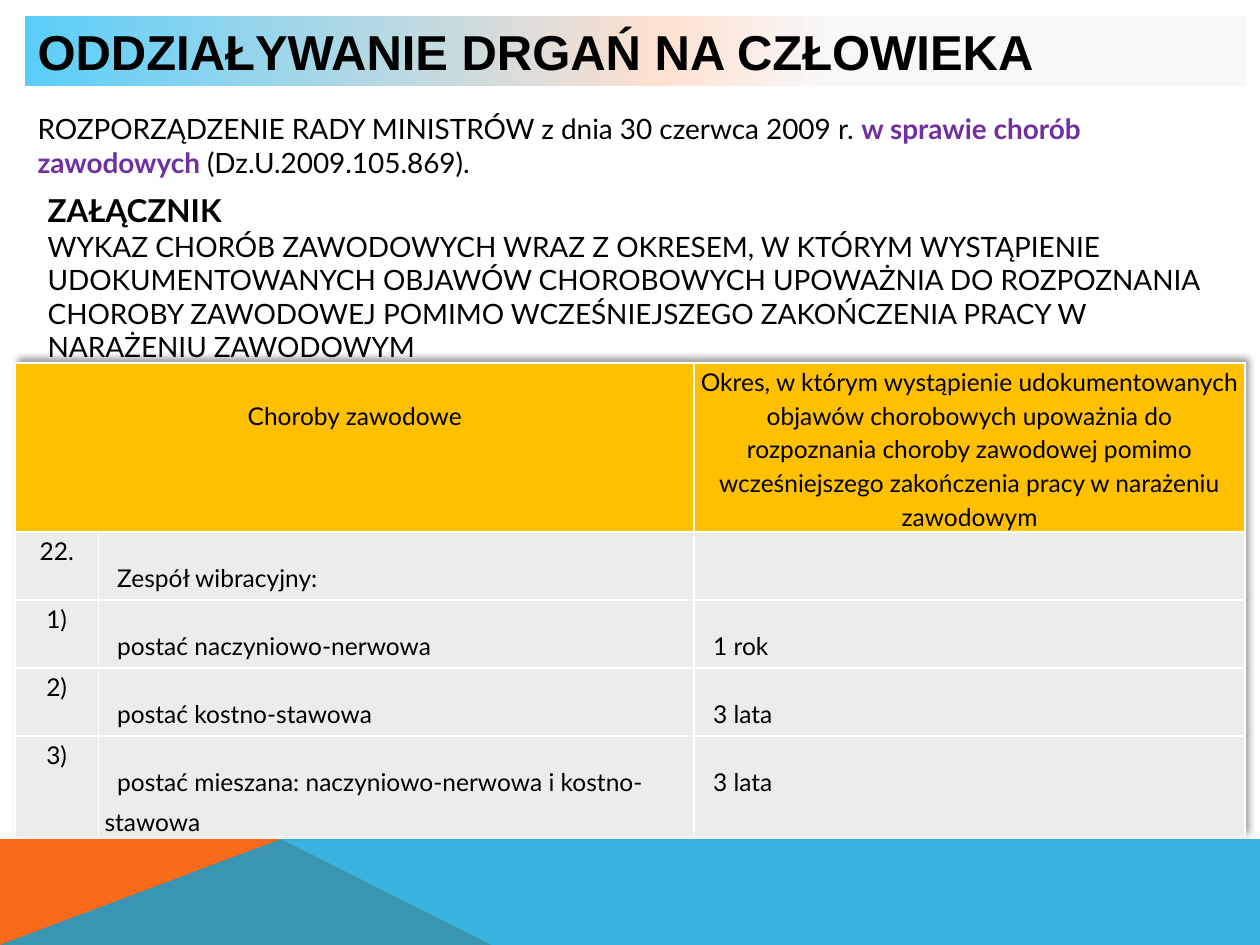
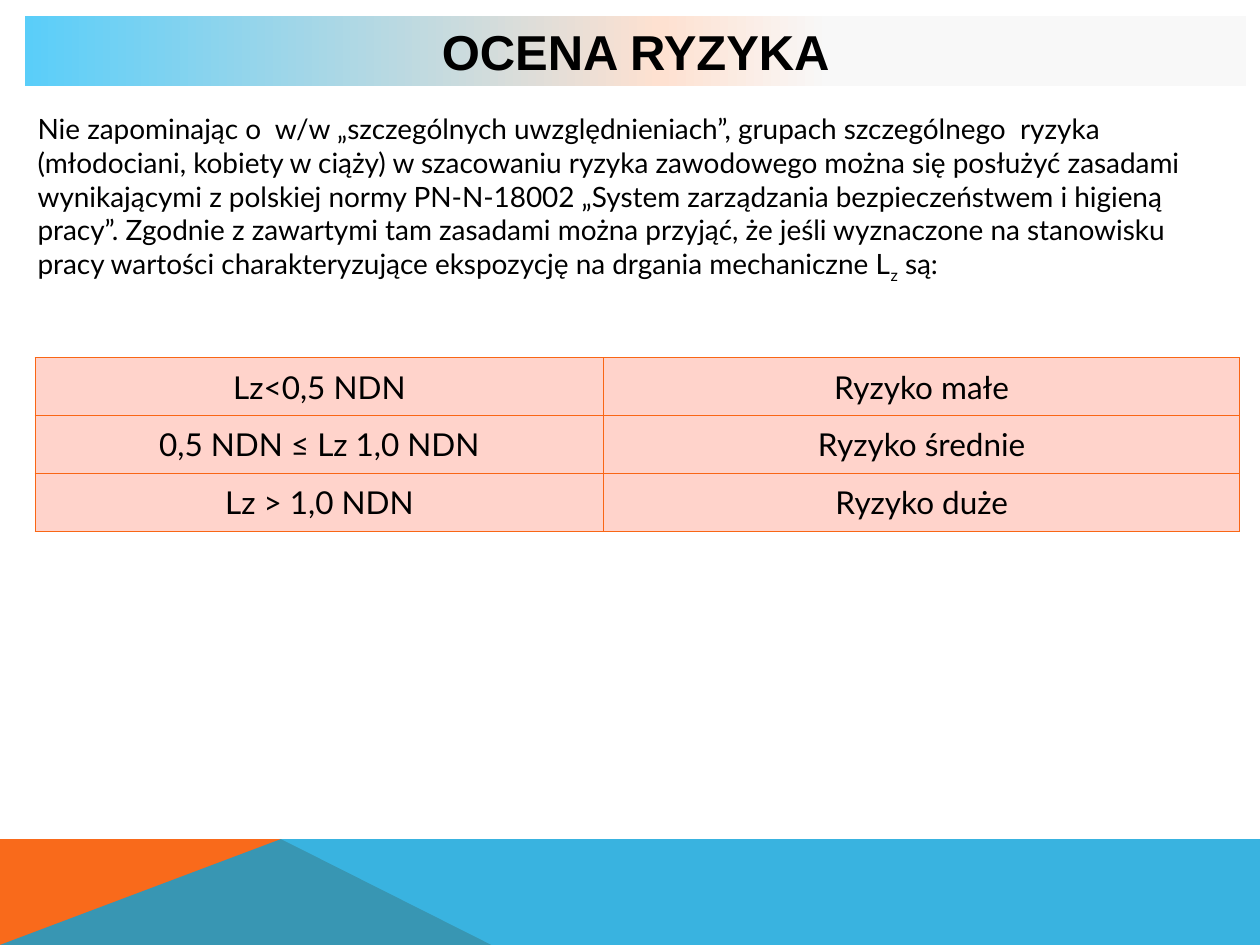
"""Build two slides on vibration and occupational risk."""
from dataclasses import dataclass

from lxml.etree import SubElement
from pptx import Presentation
from pptx.dml.color import RGBColor
from pptx.enum.shapes import MSO_SHAPE
from pptx.enum.text import MSO_ANCHOR, PP_ALIGN
from pptx.oxml import parse_xml
from pptx.oxml.ns import nsdecls, qn
from pptx.presentation import Presentation as Deck
from pptx.shapes.autoshape import Shape
from pptx.slide import Slide
from pptx.table import Table, _Cell
from pptx.text.text import TextFrame, _Paragraph
from pptx.util import Inches, Pt

BLACK = RGBColor(0x00, 0x00, 0x00)
WHITE = RGBColor(0xFF, 0xFF, 0xFF)
PURPLE = RGBColor(0x70, 0x30, 0xA0)
ORANGE = RGBColor(0xF9, 0x6A, 0x1B)
BLUE = RGBColor(0x08, 0xA1, 0xD9)
GOLD = RGBColor(0xFF, 0xC0, 0x00)
LIGHT_GREY = RGBColor(0xEC, 0xEC, 0xEC)
PINK = RGBColor(0xFF, 0xD3, 0xCB)
BORDER_ORANGE = RGBColor(0xF9, 0x66, 0x15)
TITLE_GRADIENT = (
    (0, RGBColor(0x5A, 0xCE, 0xF9)),
    (52, RGBColor(0xFE, 0xE1, 0xD1)),
    (66, RGBColor(0xF8, 0xF8, 0xF8)),
)
TITLE_FONT = "Arial"
BODY_FONT = "Lato"
BODY_LEFT, BODY_TOP, BODY_WIDTH = 0.2, 0.84, 9.69


@dataclass(frozen=True)
class Span:
    """A stretch of text with its own format."""

    text: str
    size: float = 16
    bold: bool = False
    color: RGBColor = BLACK
    font: str = BODY_FONT
    subscript: bool = False


@dataclass(frozen=True)
class Band:
    """A filled polygon of the footer, with its opacity in percent."""

    points: tuple[tuple[float, float], ...]
    color: RGBColor
    opacity: int = 100


@dataclass(frozen=True)
class Disease:
    """A table row: number, name, reporting period and row height."""

    number: str
    name: str
    period: str
    height: float = 0.54


FOOTER_BANDS = (
    Band(((0, 7.5), (0, 6.66), (2.23, 6.66), (3.9, 7.5)), ORANGE),
    Band(((0, 7.5), (2.23, 6.66), (10, 6.66), (10, 7.5)), BLUE, opacity=80),
)
DISEASES = (
    Disease("22.", "Zespół wibracyjny:", ""),
    Disease("1)", "postać naczyniowo-nerwowa", "1 rok"),
    Disease("2)", "postać kostno-stawowa", "3 lata"),
    Disease("3)", "postać mieszana: naczyniowo-nerwowa i kostno-stawowa", "3 lata", 0.8),
)
RISKS = (
    ("Lz<0,5 NDN", "Ryzyko małe"),
    ("0,5 NDN ≤ Lz 1,0 NDN", "Ryzyko średnie"),
    ("Lz > 1,0 NDN", "Ryzyko duże"),
)


def write_spans(para: _Paragraph, *spans: Span, align: PP_ALIGN = PP_ALIGN.LEFT) -> None:
    """Write formatted spans into a paragraph."""
    para.alignment = align
    for span in spans:
        run = para.add_run()
        run.text = span.text
        run.font.name = span.font
        run.font.size = Pt(span.size)
        run.font.bold = span.bold
        run.font.color.rgb = span.color
        if span.subscript:
            run.font._element.set("baseline", "-25000")


def add_text(slide: Slide, left: float, top: float, width: float, height: float,
             *lines: tuple[Span, ...]) -> TextFrame:
    """Add a wrapped text box with one paragraph per line of spans."""
    box = slide.shapes.add_textbox(Inches(left), Inches(top), Inches(width), Inches(height))
    frame = box.text_frame
    frame.word_wrap = True
    for index, spans in enumerate(lines):
        write_spans(frame.add_paragraph() if index else frame.paragraphs[0], *spans)
    return frame


def fill_gradient(shape: Shape) -> None:
    """Give a shape the horizontal title gradient."""
    shape.fill.gradient()
    shape.fill.gradient_angle = 0
    stops = shape._element.spPr.find(qn("a:gradFill")).find(qn("a:gsLst"))
    for stop in list(stops):
        stops.remove(stop)
    for position, color in TITLE_GRADIENT:
        stop = SubElement(stops, qn("a:gs"), pos=str(position * 1000))
        SubElement(stop, qn("a:srgbClr"), val=str(color))


def add_title(slide: Slide, text: str, align: PP_ALIGN) -> None:
    """Add the gradient title bar."""
    bar = slide.shapes.add_shape(MSO_SHAPE.RECTANGLE, Inches(0.2), Inches(0.13),
                                 Inches(9.69), Inches(0.55))
    bar.shadow.inherit = False
    bar.line.fill.background()
    fill_gradient(bar)
    frame = bar.text_frame
    frame.word_wrap = True
    frame.vertical_anchor = MSO_ANCHOR.MIDDLE
    write_spans(frame.paragraphs[0], Span(text, size=28, bold=True, font=TITLE_FONT), align=align)


def add_band(slide: Slide, band: Band) -> None:
    """Draw one footer polygon."""
    points = [(Inches(x), Inches(y)) for x, y in band.points]
    builder = slide.shapes.build_freeform(*points[0])
    builder.add_line_segments(points[1:], close=True)
    shape = builder.convert_to_shape()
    shape.shadow.inherit = False
    shape.line.fill.background()
    shape.fill.solid()
    shape.fill.fore_color.rgb = band.color
    if band.opacity < 100:
        color = shape._element.spPr.find(qn("a:solidFill"))[0]
        SubElement(color, qn("a:alpha"), val=str(band.opacity * 1000))


def add_page(deck: Deck, title: str, align: PP_ALIGN) -> Slide:
    """Add a blank page with the shared footer and title bar."""
    page = deck.slides.add_slide(deck.slide_layouts[6])
    for band in FOOTER_BANDS:
        add_band(page, band)
    add_title(page, title, align)
    return page


def add_grid(slide: Slide, left: float, top: float, columns: tuple[float, ...],
             rows: tuple[float, ...]) -> Table:
    """Add an unstyled table with the given column widths and row heights."""
    table = slide.shapes.add_table(len(rows), len(columns), Inches(left), Inches(top),
                                   Inches(sum(columns)), Inches(sum(rows))).table
    table.first_row = table.horz_banding = False
    for column, width in zip(table.columns, columns):
        column.width = Inches(width)
    for row, height in zip(table.rows, rows):
        row.height = Inches(height)
    return table


def style_cell(cell: _Cell, fill: RGBColor, border: RGBColor, border_width: float) -> None:
    """Set the borders and fill of a cell."""
    properties = cell._tc.get_or_add_tcPr()
    for side in ("a:lnL", "a:lnR", "a:lnT", "a:lnB"):
        line = SubElement(properties, qn(side), w=str(Pt(border_width)))
        SubElement(SubElement(line, qn("a:solidFill")), qn("a:srgbClr"), val=str(border))
    cell.fill.solid()
    cell.fill.fore_color.rgb = fill


def write_disease_cell(cell: _Cell, text: str, *, fill: RGBColor = LIGHT_GREY,
                       align: PP_ALIGN = PP_ALIGN.CENTER, top: float = 0,
                       spacing: float = 1.15, indent: float = 0) -> None:
    """Fill a cell of the disease table."""
    style_cell(cell, fill, WHITE, 1)
    cell.margin_left = cell.margin_right = Inches(0.05)
    cell.margin_top, cell.margin_bottom = Inches(top), 0
    para = cell.text_frame.paragraphs[0]
    para.line_spacing = spacing
    para._p.get_or_add_pPr().set("indent", str(Inches(indent)))
    if text:
        write_spans(para, Span(text, size=14), align=align)


def add_table_shadow(table: Table) -> None:
    """Add a soft shadow towards the upper right of a table."""
    table._tbl.tblPr.insert(0, parse_xml(
        f'<a:effectLst {nsdecls("a")}><a:outerShdw blurRad="50800" dist="38100" '
        'dir="18900000" algn="bl" rotWithShape="0"><a:srgbClr val="000000">'
        '<a:alpha val="40000"/></a:srgbClr></a:outerShdw></a:effectLst>'))


def add_disease_table(slide: Slide) -> None:
    """Add the table of occupational diseases and periods."""
    heights = (1.34, *(disease.height for disease in DISEASES))
    table = add_grid(slide, 0.12, 2.88, (0.66, 4.73, 4.37), heights)
    add_table_shadow(table)
    table.cell(0, 0).merge(table.cell(0, 1))
    write_disease_cell(table.cell(0, 0), "Choroby zawodowe", fill=GOLD, top=0.27)
    style_cell(table.cell(0, 1), GOLD, WHITE, 1)
    write_disease_cell(
        table.cell(0, 2),
        "Okres, w którym wystąpienie udokumentowanych objawów chorobowych upoważnia do "
        "rozpoznania choroby zawodowej pomimo wcześniejszego zakończenia pracy w narażeniu "
        "zawodowym", fill=GOLD)
    for row, disease in enumerate(DISEASES, start=1):
        write_disease_cell(table.cell(row, 0), disease.number)
        for column, text in enumerate((disease.name, disease.period), start=1):
            write_disease_cell(table.cell(row, column), text, align=PP_ALIGN.LEFT,
                               top=0.17, spacing=1.35, indent=0.1)


def add_risk_table(slide: Slide) -> None:
    """Add the table of exposure ranges and risk levels."""
    table = add_grid(slide, 0.28, 2.84, (4.51, 5.05), (0.46,) * len(RISKS))
    for row, texts in enumerate(RISKS):
        for column, text in enumerate(texts):
            cell = table.cell(row, column)
            style_cell(cell, PINK, BORDER_ORANGE, 0.75)
            cell.vertical_anchor = MSO_ANCHOR.MIDDLE
            write_spans(cell.text_frame.paragraphs[0], Span(text, size=18), align=PP_ALIGN.CENTER)


def build_diseases_page(deck: Deck) -> None:
    """Build the page on the effects of vibration on people."""
    page = add_page(deck, "ODDZIAŁYWANIE DRGAŃ NA CZŁOWIEKA", PP_ALIGN.LEFT)
    add_text(page, BODY_LEFT, BODY_TOP, BODY_WIDTH, 0.87, (
        Span("ROZPORZĄDZENIE RADY MINISTRÓW z dnia 30 czerwca 2009 r. "),
        Span("w sprawie chorób zawodowych ", bold=True, color=PURPLE),
        Span("(Dz.U.2009.105.869)."),
    ))
    add_disease_table(page)
    add_text(page, 0.28, 1.47, 9.61, 1.21, (Span("ZAŁĄCZNIK", size=18, bold=True),), (
        Span("WYKAZ CHORÓB ZAWODOWYCH WRAZ Z OKRESEM, W KTÓRYM WYSTĄPIENIE UDOKUMENTOWANYCH "
             "OBJAWÓW CHOROBOWYCH UPOWAŻNIA DO ROZPOZNANIA CHOROBY ZAWODOWEJ POMIMO "
             "WCZEŚNIEJSZEGO ZAKOŃCZENIA PRACY W NARAŻENIU ZAWODOWYM"),
    ))


def build_risk_page(deck: Deck) -> None:
    """Build the page on risk assessment."""
    page = add_page(deck, "OCENA RYZYKA", PP_ALIGN.CENTER)
    add_text(page, BODY_LEFT, BODY_TOP, BODY_WIDTH, 1.5, (
        Span("Nie zapominając o  w/w „szczególnych uwzględnieniach”, grupach szczególnego  "
             "ryzyka (młodociani, kobiety w ciąży) w szacowaniu ryzyka zawodowego można się "
             "posłużyć zasadami wynikającymi z polskiej normy PN-N-18002 „System zarządzania "
             "bezpieczeństwem i higieną pracy”. Zgodnie z zawartymi tam zasadami można przyjąć, "
             "że jeśli wyznaczone na stanowisku pracy wartości charakteryzujące ekspozycję na "
             "drgania mechaniczne L"),
        Span("z", subscript=True),
        Span(" są:"),
    ))
    add_risk_table(page)


def main() -> None:
    """Build and save the deck."""
    deck = Presentation()
    deck.slide_width, deck.slide_height = Inches(10), Inches(7.5)
    build_diseases_page(deck)
    build_risk_page(deck)
    deck.save("out.pptx")


if __name__ == "__main__":
    main()
